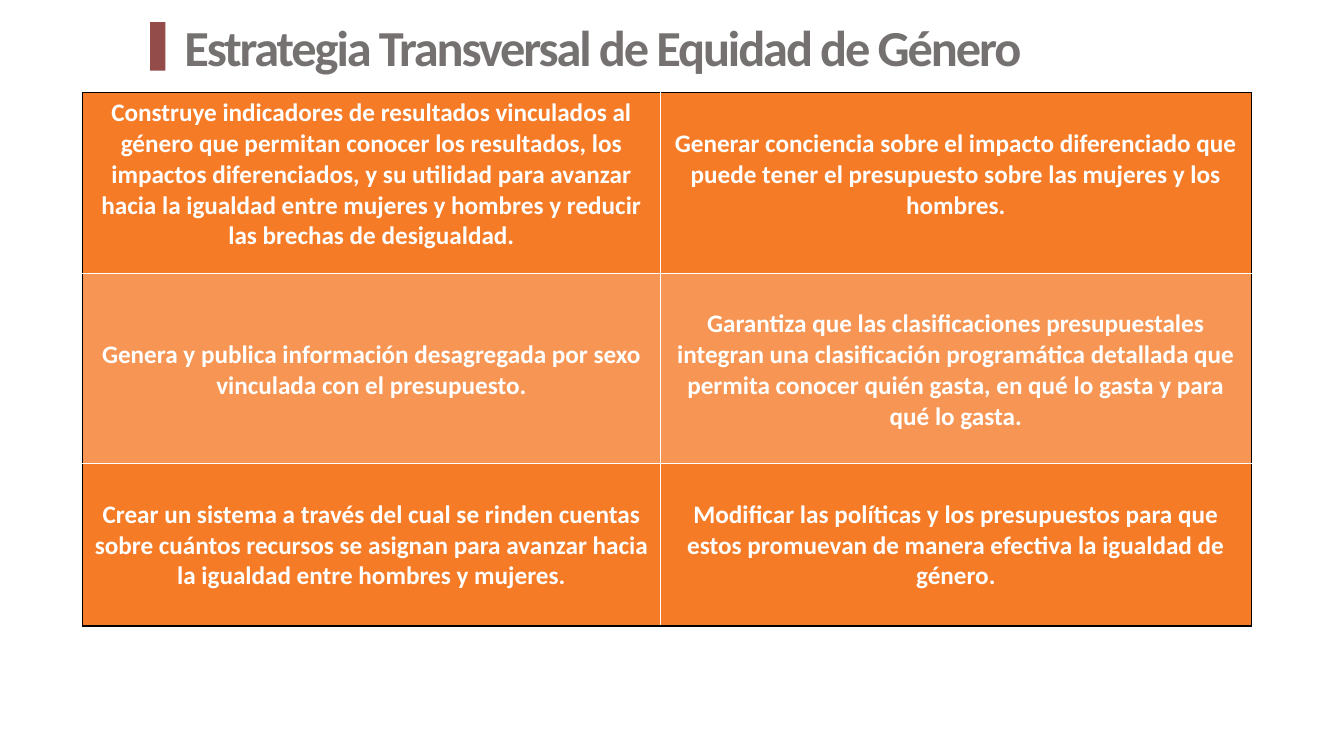
from lxml.etree import SubElement
from pptx import Presentation
from pptx.dml.color import RGBColor
from pptx.enum.shapes import MSO_SHAPE
from pptx.enum.text import MSO_ANCHOR, PP_ALIGN
from pptx.oxml.ns import qn
from pptx.util import Inches, Pt

COLORS = {
    "orange": "F57B27",
    "light_orange": "F79654",
    "white": "FFFFFF",
    "black": "000000",
    "title": "767171",
    "accent": "934C49",
}
FONT = "Calibri"
LINE_HEIGHT = 0.305
COLUMN_WIDTHS = [5.73, 5.86]
ROW_HEIGHTS = [1.79, 1.89, 1.61]
ROW_FILLS = ["orange", "light_orange", "orange"]

# Each cell: text and the number of lines it is lowered from the top.
STRATEGIES = [
    [
        ("Construye indicadores de resultados vinculados al género que permitan "
         "conocer los resultados, los impactos diferenciados, y su utilidad para "
         "avanzar hacia la igualdad entre mujeres y hombres y reducir las brechas "
         "de desigualdad.", 0),
        ("Generar conciencia sobre el impacto diferenciado que puede tener el "
         "presupuesto sobre las mujeres y los hombres.", 1),
    ],
    [
        ("Genera y publica información desagregada por sexo vinculada con el "
         "presupuesto.", 2),
        ("Garantiza que las clasificaciones presupuestales integran una "
         "clasificación programática detallada que permita conocer quién gasta, "
         "en qué lo gasta y para qué lo gasta.", 1),
    ],
    [
        ("Crear un sistema a través del cual se rinden cuentas sobre cuántos "
         "recursos se asignan para avanzar hacia la igualdad entre hombres y "
         "mujeres.", 1),
        ("Modificar las políticas y los presupuestos para que estos promuevan de "
         "manera efectiva la igualdad de género.", 1),
    ],
]


def color(name):
    return RGBColor.from_string(COLORS[name])


def style_font(paragraph, size, color_name):
    font = paragraph.font
    font.name = FONT
    font.size = Pt(size)
    font.bold = True
    font.color.rgb = color(color_name)


def set_borders(cell, outer_sides):
    """Draw black lines on the table's outer sides and white ones inside."""
    properties = cell._tc.get_or_add_tcPr()
    for side in "LRTB":
        line = SubElement(properties, qn(f"a:ln{side}"), w=str(Pt(1)))
        fill = SubElement(line, qn("a:solidFill"))
        name = "black" if side in outer_sides else "white"
        SubElement(fill, qn("a:srgbClr"), val=COLORS[name])


def fill_cell(cell, text, lowered_lines, fill_name, outer_sides):
    set_borders(cell, outer_sides)
    cell.fill.solid()
    cell.fill.fore_color.rgb = color(fill_name)
    cell.margin_top = Inches(0.05 + lowered_lines * LINE_HEIGHT)
    cell.text = text
    paragraph = cell.text_frame.paragraphs[0]
    paragraph.alignment = PP_ALIGN.CENTER
    style_font(paragraph, 18, "white")


def add_strategy_table(slide):
    table = slide.shapes.add_table(
        len(ROW_HEIGHTS), len(COLUMN_WIDTHS), Inches(0.82), Inches(0.92),
        Inches(sum(COLUMN_WIDTHS)), Inches(sum(ROW_HEIGHTS))).table
    table.first_row = False
    table.horz_banding = False
    for column, width in zip(table.columns, COLUMN_WIDTHS):
        column.width = Inches(width)
    for row, height in zip(table.rows, ROW_HEIGHTS):
        row.height = Inches(height)
    for row_index, strategies in enumerate(STRATEGIES):
        vertical = {0: "T", len(STRATEGIES) - 1: "B"}.get(row_index, "")
        for column_index, (text, lowered_lines) in enumerate(strategies):
            fill_cell(table.cell(row_index, column_index), text, lowered_lines,
                      ROW_FILLS[row_index], "LR"[column_index] + vertical)


def add_title(slide, text):
    box = slide.shapes.add_textbox(
        Inches(1.73), Inches(-0.17), Inches(9.78), Inches(1.25))
    frame = box.text_frame
    frame.word_wrap = True
    frame.vertical_anchor = MSO_ANCHOR.MIDDLE
    paragraph = frame.paragraphs[0]
    run = paragraph.add_run()
    run.text = text
    run._r.get_or_add_rPr().set("spc", "-150")
    style_font(paragraph, 36, "title")


def add_accent_bar(slide):
    bar = slide.shapes.add_shape(
        MSO_SHAPE.RECTANGLE, Inches(1.49), Inches(0.22), Inches(0.15), Inches(0.48))
    bar.shadow.inherit = False
    bar.fill.solid()
    bar.fill.fore_color.rgb = color("accent")
    bar.line.fill.background()


def main():
    presentation = Presentation()
    presentation.slide_width = Inches(13.33)
    presentation.slide_height = Inches(7.5)
    slide = presentation.slides.add_slide(presentation.slide_layouts[6])
    add_strategy_table(slide)
    add_title(slide, "Estrategia Transversal de Equidad de Género")
    add_accent_bar(slide)
    presentation.save("out.pptx")


if __name__ == "__main__":
    main()
